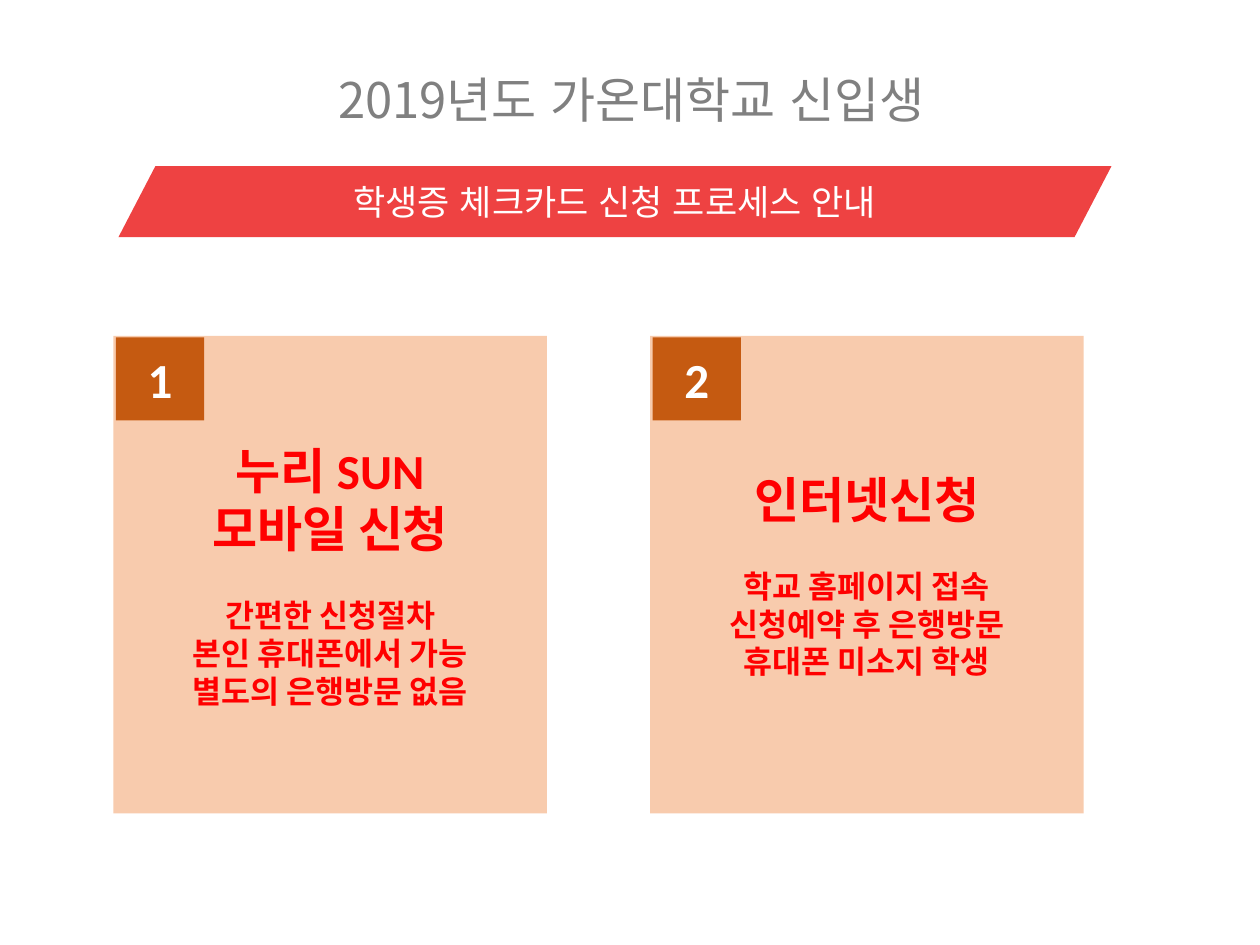
"""Build the student card application slide."""
from lxml import etree
from pptx import Presentation
from pptx.dml.color import RGBColor
from pptx.enum.lang import MSO_LANGUAGE_ID
from pptx.enum.shapes import MSO_SHAPE
from pptx.enum.text import MSO_ANCHOR, PP_ALIGN
from pptx.oxml.ns import qn
from pptx.util import Pt

RECT, SLANT = MSO_SHAPE.RECTANGLE, MSO_SHAPE.PARALLELOGRAM
MIDDLE, CENTER = MSO_ANCHOR.MIDDLE, PP_ALIGN.CENTER
KOREAN = MSO_LANGUAGE_ID.KOREAN
SANS, BODY = "Noto Sans CJK KR", "Calibri"
WHITE, GRAY, RED = "FFFFFF", "808080", "FF0000"
CORAL, PEACH, RUST = "EE4242", "F8CBAD", "C55A11"

TITLE = "2019년도 가온대학교 신입생"
BANNER = "학생증 체크카드 신청 프로세스 안내"
CARDS = [
    (["누리 SUN", "모바일 신청"],
     ["간편한 신청절차", "본인 휴대폰에서 가능", "별도의 은행방문 없음"]),
    (["인터넷신청"],
     ["학교 홈페이지 접속", "신청예약 후 은행방문", "휴대폰 미소지 학생"]),
]
LEFT, TOP, STEP = 64.8, 192, 306.7
CARD_W, CARD_H = 247.7, 272.9
TAG_W, TAG_H, INSET = 50.4, 47.5, 1.5


def color(code):
    return RGBColor.from_string(code)


def write(frame, text, size=28, font=BODY, ink=WHITE, bold=False, gap=0):
    first = frame.paragraphs[0]
    para = frame.add_paragraph() if first.runs else first
    para.alignment = CENTER
    para.space_before = Pt(gap)
    run = para.add_run()
    run.text = text
    face = run.font
    face.size, face.bold, face.name = Pt(size), bold, font
    face.color.rgb = color(ink)
    face.language_id = KOREAN
    etree.SubElement(run._r.get_or_add_rPr(), qn("a:ea"), typeface=font)


def block(slide, kind, box, fill):
    shape = slide.shapes.add_shape(kind, *map(Pt, box))
    shape.shadow.inherit = False
    shape.fill.solid()
    shape.fill.fore_color.rgb = color(fill)
    shape.line.fill.background()
    shape.text_frame.vertical_anchor = MIDDLE
    return shape


def main():
    deck = Presentation()
    deck.slide_width, deck.slide_height = Pt(720), Pt(540)
    slide = deck.slides.add_slide(deck.slide_layouts[6])

    banner = block(slide, SLANT, (67.7, 95, 567.4, 40.5), CORAL)
    banner.adjustments[0] = 0.52
    write(banner.text_frame, BANNER, size=20, font=SANS)

    title = slide.shapes.add_textbox(*map(Pt, (126.7, 36, 468, 41)))
    title.text_frame.word_wrap = True
    write(title.text_frame, TITLE, font=SANS, ink=GRAY)

    for i, (heads, notes) in enumerate(CARDS):
        x = LEFT + i * STEP
        card = block(slide, RECT, (x, TOP, CARD_W, CARD_H), PEACH)
        for head in heads:
            write(card.text_frame, head, ink=RED, bold=True)
        for j, note in enumerate(notes):
            write(card.text_frame, note, size=18, ink=RED, bold=True,
                  gap=0 if j else 22)
        tag = block(slide, RECT, (x + INSET, TOP + INSET / 2, TAG_W, TAG_H), RUST)
        write(tag.text_frame, str(i + 1), bold=True)

    deck.save("out.pptx")


if __name__ == "__main__":
    main()
